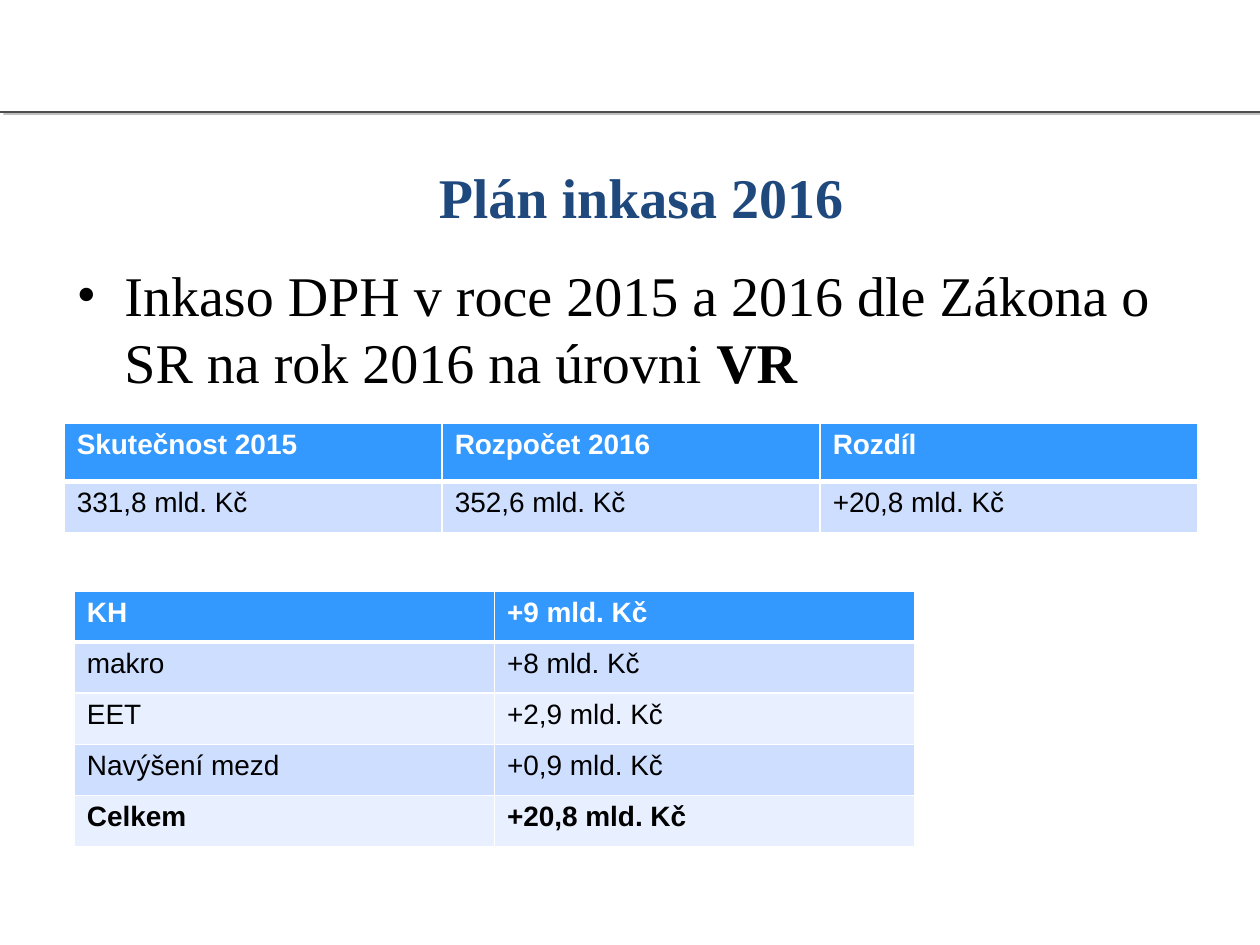
from dataclasses import dataclass

from pptx import Presentation
from pptx import util as u
from pptx.dml.color import RGBColor
from pptx.enum import shapes, text
from pptx.oxml import parse_xml
from pptx.oxml.ns import nsdecls


@dataclass(frozen=True)
class Theme:
    serif: str = "Times New Roman"
    sans: str = "Arial"
    heading_size: int = 32
    table_size: int = 16
    heading: str = "1F497D"
    ink: str = "000000"
    white: str = "FFFFFF"
    rule: str = "4D4D4D"
    shadow: str = "808080"
    header: str = "3399FF"
    bands: tuple = ("CEDEFF", "E8EFFF")


THEME = Theme()
WIDTH, HEIGHT = u.Inches(10), u.Inches(7.5)
COLUMNS = ROWS = 100


def grid(left, top, width, height):
    column, row = WIDTH / COLUMNS, HEIGHT / ROWS
    return [round(n) for n in (left * column, top * row, width * column, height * row)]


def add_span(para, words, font=THEME.serif, size=THEME.heading_size,
             color=THEME.ink, bold=False):
    span = para.add_run()
    span.text = words
    span.font.name = font
    span.font.size = u.Pt(size)
    span.font.bold = bold
    span.font.color.rgb = RGBColor.from_string(color)
    return span


def add_rule(page, box):
    left, top, width, height = box
    rule = page.shapes.add_connector(
        shapes.MSO_CONNECTOR.STRAIGHT, left, top, left + width, top + height)
    rule.line.color.rgb = RGBColor.from_string(THEME.rule)
    rule.line.width = u.Pt(1)
    rule._element.spPr.append(parse_xml(
        f'<a:effectLst {nsdecls("a")}>'
        f'<a:outerShdw dist="{u.Pt(2.2)}" dir="{27 * 60000}">'
        f'<a:srgbClr val="{THEME.shadow}"><a:alpha val="50000"/></a:srgbClr>'
        '</a:outerShdw></a:effectLst>'))


def add_title(page, box, words):
    title = page.shapes.title
    title.left, title.top, title.width, title.height = box
    frame = title.text_frame
    frame.word_wrap = True
    frame.auto_size = text.MSO_AUTO_SIZE.NONE
    frame.vertical_anchor = text.MSO_ANCHOR.MIDDLE
    frame.margin_bottom = u.Inches(0.37)
    para = frame.paragraphs[0]
    para.alignment = text.PP_ALIGN.CENTER
    add_span(para, words, color=THEME.heading, bold=True)


def add_bullet(page, box, words, emphasis):
    frame = page.shapes.add_textbox(*box).text_frame
    frame.word_wrap = True
    para = frame.paragraphs[0]
    properties = para._p.get_or_add_pPr()
    indent = u.Inches(0.38)
    properties.set("marL", str(indent))
    properties.set("indent", str(-indent))
    properties.append(parse_xml(f'<a:buFont {nsdecls("a")} typeface="{THEME.serif}"/>'))
    properties.append(parse_xml(f'<a:buChar {nsdecls("a")} char="•"/>'))
    add_span(para, words)
    add_span(para, emphasis, bold=True)


def format_cell(cell, words, fill, color, bold, bottom):
    properties = cell._tc.get_or_add_tcPr()
    for side, points in (("L", 1), ("R", 1), ("T", 1), ("B", bottom)):
        properties.append(parse_xml(
            f'<a:ln{side} {nsdecls("a")} w="{u.Pt(points)}"><a:solidFill>'
            f'<a:srgbClr val="{THEME.white}"/></a:solidFill></a:ln{side}>'))
    cell.fill.solid()
    cell.fill.fore_color.rgb = RGBColor.from_string(fill)
    add_span(cell.text_frame.paragraphs[0], words, font=THEME.sans,
             size=THEME.table_size, color=color, bold=bold)


def add_table(page, box, records, header_share, total=False):
    height = box[3]
    table = page.shapes.add_table(len(records), len(records[0]), *box).table
    table.horz_banding = False
    body_share = (1 - header_share) / (len(records) - 1)
    for i, record in enumerate(records):
        header = i == 0
        table.rows[i].height = round(height * (header_share if header else body_share))
        for j, words in enumerate(record):
            format_cell(
                table.cell(i, j), words,
                fill=THEME.header if header else THEME.bands[(i - 1) % 2],
                color=THEME.white if header else THEME.ink,
                bold=header or (total and i == len(records) - 1),
                bottom=3 if header else 1)


def build_plan(deck):
    page = deck.slides.add_slide(deck.slide_layouts[5])
    add_rule(page, grid(0, 11.87, 100, 0))
    add_title(page, grid(5.9, 15.33, 90, 15.07), "Plán inkasa 2016")
    add_bullet(page, grid(5.1, 26.93, 90, 14.67),
               "Inkaso DPH v roce 2015 a 2016 dle Zákona o SR na rok 2016 na úrovni ", "VR")
    add_table(page, grid(5.1, 44.8, 90, 11.6), [
        ("Skutečnost 2015", "Rozpočet 2016", "Rozdíl"),
        ("331,8 mld. Kč", "352,6 mld. Kč", "+20,8 mld. Kč"),
    ], header_share=0.53)
    add_table(page, grid(5.9, 62.53, 66.7, 27.07), [
        ("KH", "+9 mld. Kč"),
        ("makro", "+8 mld. Kč"),
        ("EET", "+2,9 mld. Kč"),
        ("Navýšení mezd", "+0,9 mld. Kč"),
        ("Celkem", "+20,8 mld. Kč"),
    ], header_share=0.2, total=True)


def main():
    deck = Presentation()
    deck.slide_width, deck.slide_height = WIDTH, HEIGHT
    build_plan(deck)
    deck.save("out.pptx")


if __name__ == "__main__":
    main()
